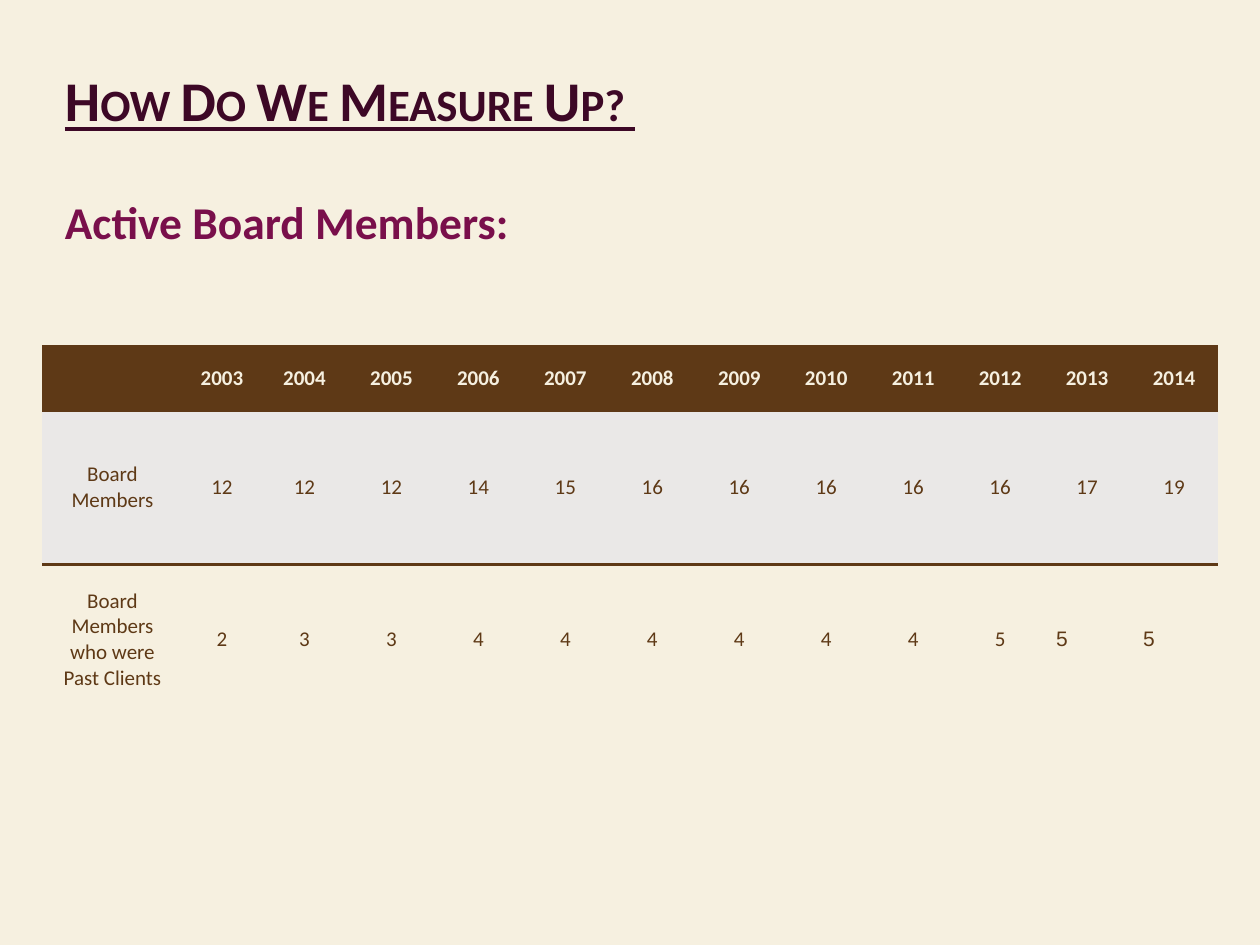
import dataclasses

import pptx
import pptx.dml.color
import pptx.enum.text
import pptx.oxml
import pptx.oxml.ns
import pptx.util

PIXELS_PER_INCH = 126
NO_TABLE_STYLE = "{2D5ABB26-0587-4C30-8999-92F81FD0307C}"
ALIGN = pptx.enum.text.PP_ALIGN
ANCHOR = pptx.enum.text.MSO_ANCHOR


@dataclasses.dataclass(frozen=True)
class Theme:
    background: str = "F6F0E0"
    title: str = "3D0826"
    subtitle: str = "790F4B"
    brown: str = "5E3916"
    band: str = "EAE8E7"
    font: str = "Calibri"
    plain_font: str = "Arial"
    title_size: int = 32
    subtitle_size: int = 26
    table_size: int = 12
    border_width: int = 2


THEME = Theme()

YEARS = [str(year) for year in range(2003, 2015)]
MEMBERS = [12, 12, 12, 14, 15, 16, 16, 16, 16, 16, 17, 19]
PAST_CLIENTS = [2, 3, 3, 4, 4, 4, 4, 4, 4, 5, 5, 5]
COLUMN_WIDTHS = [141, 78] + [87] * 11
ROW_HEIGHTS = [63, 155, 149]


def px(length):
    return pptx.util.Emu(round(length * 914400 / PIXELS_PER_INCH))


def rgb(color):
    return pptx.dml.color.RGBColor.from_string(color)


def paint(fill, color):
    fill.solid()
    fill.fore_color.rgb = rgb(color)


def write(paragraph, text, *, size, color, font=THEME.font, bold=False,
          underline=False, small_caps=False, align=ALIGN.LEFT, space_before=0):
    paragraph.alignment = align
    paragraph.space_before = px(space_before)
    run = paragraph.add_run()
    run.text = text
    run.font.name = font
    run.font.size = pptx.util.Pt(size)
    run.font.color.rgb = rgb(color)
    run.font.bold = bold
    run.font.underline = underline
    if small_caps:
        run.font._element.set("cap", "small")


def add_heading(slide):
    shape = slide.shapes.add_textbox(px(53), px(136), px(1071), px(158))
    frame = shape.text_frame
    frame.word_wrap = True
    frame.vertical_anchor = ANCHOR.BOTTOM
    frame.margin_left = frame.margin_right = px(12)
    frame.margin_top = 0
    frame.margin_bottom = px(45)
    write(frame.paragraphs[0], "How Do We Measure Up? ", size=THEME.title_size,
          color=THEME.title, bold=True, underline=True, small_caps=True)
    write(frame.add_paragraph(), "Active Board Members:", size=THEME.subtitle_size,
          color=THEME.subtitle, bold=True, space_before=62)


def add_border(cell, side):
    """Draw one edge of a cell; side is lnT or lnB."""
    width = pptx.util.Pt(THEME.border_width)
    line = pptx.oxml.parse_xml(
        f'<a:{side} {pptx.oxml.ns.nsdecls("a")} w="{width}"><a:solidFill>'
        f'<a:srgbClr val="{THEME.brown}"/></a:solidFill></a:{side}>')
    properties = cell._tc.get_or_add_tcPr()
    # Borders come before the fill, in the order top, bottom
    position = len(properties.findall(pptx.oxml.ns.qn("a:lnT")))
    properties.insert(position, line)


def fill_cell(cell, text, *, fill, **text_format):
    paint(cell.fill, fill)
    cell.vertical_anchor = ANCHOR.MIDDLE
    write(cell.text_frame.paragraphs[0], text, size=THEME.table_size, **text_format)


def add_board_table(slide):
    rows = [[""] + YEARS,
            ["Board Members"] + MEMBERS,
            ["Board Members who were Past Clients"] + PAST_CLIENTS]
    fills = [THEME.brown, THEME.band, THEME.background]
    frame = slide.shapes.add_table(len(rows), len(COLUMN_WIDTHS), px(42), px(347),
                                   px(sum(COLUMN_WIDTHS)), px(sum(ROW_HEIGHTS)))
    table = frame.table
    table._tbl.tblPr.find(pptx.oxml.ns.qn("a:tableStyleId")).text = NO_TABLE_STYLE
    for column, width in zip(table.columns, COLUMN_WIDTHS):
        column.width = px(width)
    for row, height in zip(table.rows, ROW_HEIGHTS):
        row.height = px(height)

    for row_index, values in enumerate(rows):
        header = row_index == 0
        for column_index, value in enumerate(values):
            cell = table.cell(row_index, column_index)
            # The last two past-client counts are set plain, at the left
            plain = row_index == 2 and column_index > 10
            fill_cell(cell, str(value), fill=fills[row_index], bold=header,
                      color=THEME.background if header else THEME.brown,
                      font=THEME.plain_font if plain else THEME.font,
                      align=ALIGN.LEFT if plain else ALIGN.CENTER)
            if header:
                add_border(cell, "lnT")
                add_border(cell, "lnB")
            elif row_index == 1:
                add_border(cell, "lnT")


def main():
    presentation = pptx.Presentation()
    presentation.slide_width = px(1260)
    presentation.slide_height = px(945)
    slide = presentation.slides.add_slide(presentation.slide_layouts[6])
    paint(slide.background.fill, THEME.background)
    add_heading(slide)
    add_board_table(slide)
    presentation.save("out.pptx")


if __name__ == "__main__":
    main()
